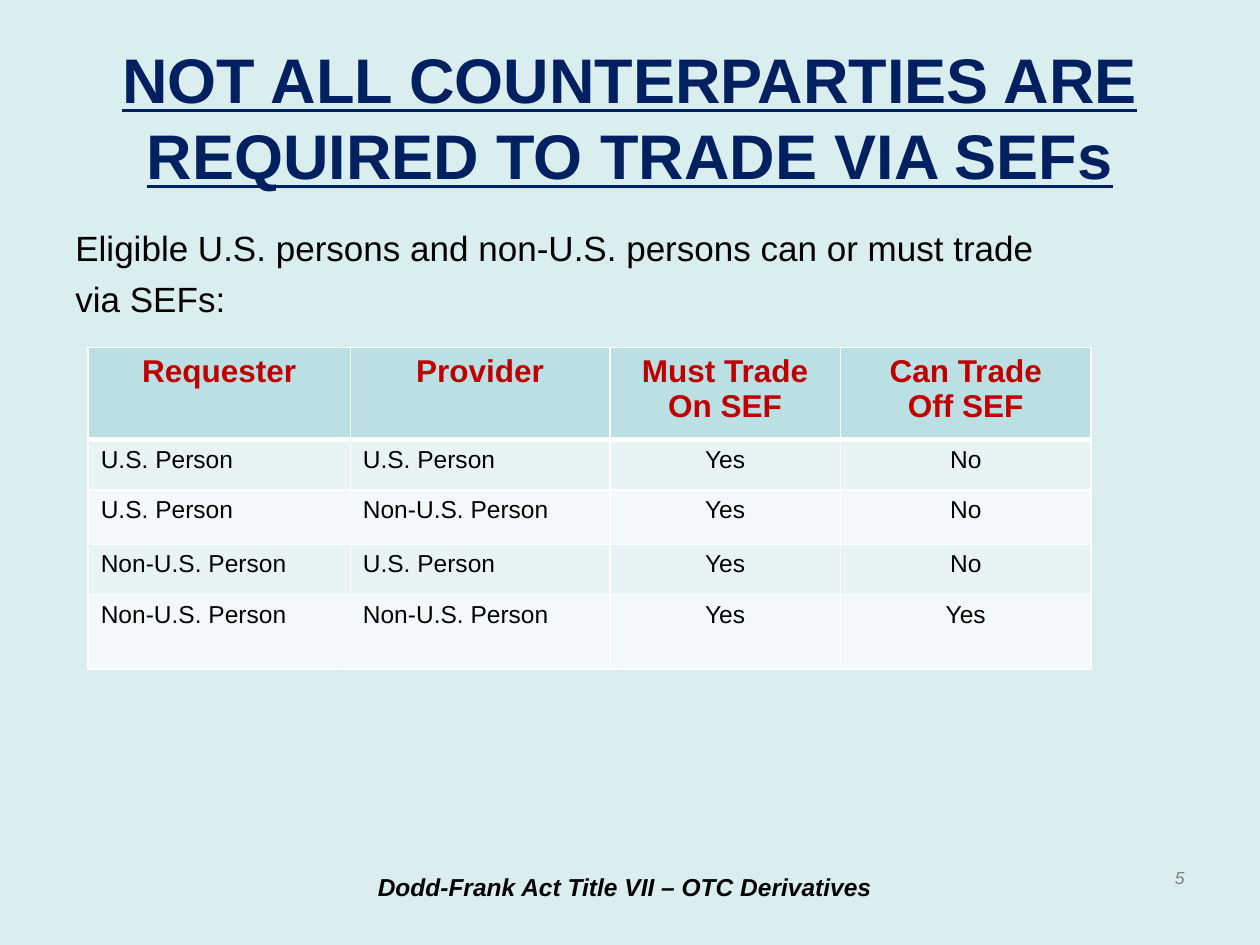
from lxml import etree
from pptx import Presentation
from pptx import util as u
from pptx.dml.color import RGBColor
from pptx.enum import text
from pptx.oxml.ns import qn

LEFT, CENTER, RIGHT = text.PP_ALIGN.LEFT, text.PP_ALIGN.CENTER, text.PP_ALIGN.RIGHT
COLUMNS, ROWS = 100, 75


def rgb(value):
    """Turn a hex string into a colour."""
    return RGBColor.from_string(value)


class Deck:
    """Holds the style and the current slide, placing elements on a grid."""

    font = "Arial"
    black, navy, red, grey = "000000", "002060", "C00000", "808080"
    background, header, bands, rule = "DAEDEF", "BBE0E3", ("E7F3F4", "F3F9FA"), "FFFFFF"

    def __init__(self):
        """Start a deck with one blank slide."""
        self.prs = Presentation()
        self.prs.slide_width, self.prs.slide_height = u.Inches(10), u.Inches(7.5)
        self.slide = self.prs.slides.add_slide(self.prs.slide_layouts[6])
        fill = self.slide.background.fill
        fill.solid()
        fill.fore_color.rgb = rgb(self.background)

    def x(self, columns):
        """Give the length of a number of grid columns."""
        return round(self.prs.slide_width * columns / COLUMNS)

    def y(self, rows):
        """Give the length of a number of grid rows."""
        return round(self.prs.slide_height * rows / ROWS)

    def paragraphs(self, frame, lines, size, color, align=LEFT, before=0,
                   bold=False, italic=False, underline=False):
        """Fill a text frame with one paragraph per line."""
        for i, line in enumerate(lines):
            para = frame.add_paragraph() if i else frame.paragraphs[0]
            para.alignment = align
            if i and before:
                para.space_before = u.Pt(before)
            run = para.add_run()
            run.text = line
            font = run.font
            font.name, font.size, font.color.rgb = self.font, u.Pt(size), rgb(color)
            font.bold, font.italic, font.underline = bold, italic, underline

    def text(self, at, lines, size, color, anchor=text.MSO_ANCHOR.TOP, **style):
        """Add a wrapped text box."""
        left, top, width, height = at
        box = self.slide.shapes.add_textbox(self.x(left), self.y(top), self.x(width), self.y(height))
        frame = box.text_frame
        frame.word_wrap, frame.vertical_anchor = True, anchor
        self.paragraphs(frame, lines, size, color, **style)

    def borders(self, cell, bottom):
        """Rule the four sides of a cell."""
        props = cell._tc.get_or_add_tcPr()
        for side, points in (("L", 1), ("R", 1), ("T", 1), ("B", bottom)):
            line = etree.SubElement(props, qn(f"a:ln{side}"), w=str(u.Pt(points)))
            solid = etree.SubElement(line, qn("a:solidFill"))
            etree.SubElement(solid, qn("a:srgbClr"), val=self.rule)

    def table(self, left, top, widths, heights, rows):
        """Add a banded table whose first row is the header."""
        grid = self.slide.shapes.add_table(
            len(rows), len(widths), self.x(left), self.y(top),
            self.x(sum(widths)), self.y(sum(heights))).table
        for column, width in zip(grid.columns, widths):
            column.width = self.x(width)
        for r, (height, values) in enumerate(zip(heights, rows)):
            grid.rows[r].height = self.y(height)
            for c, value in enumerate(values):
                cell = grid.cell(r, c)
                self.borders(cell, 1 if r else 3)
                cell.fill.solid()
                cell.fill.fore_color.rgb = rgb(self.bands[(r - 1) % 2] if r else self.header)
                self.paragraphs(cell.text_frame, value.split("\n"), 14 if r else 18,
                                self.black if r else self.red,
                                align=LEFT if r and c < 2 else CENTER, bold=r == 0)


def main():
    """Build the slide."""
    deck = Deck()
    deck.text((5, 17.5, 90, 49.5),
              ["Eligible U.S. persons and non-U.S. persons can or must trade", "via SEFs:"],
              20, deck.black, before=5)
    deck.text((23.6, 68.7, 52, 4.4), ["Dodd-Frank Act Title VII – OTC Derivatives"],
              14, deck.black, align=CENTER, bold=True, italic=True)
    deck.text((71.7, 68.3, 23.3, 5.2), ["5"], 10, deck.grey, align=RIGHT, italic=True)
    deck.text((5, 3, 90, 12.5), ["NOT ALL COUNTERPARTIES ARE REQUIRED TO TRADE VIA SEFs"],
              36, deck.navy, anchor=text.MSO_ANCHOR.MIDDLE, align=CENTER,
              bold=True, underline=True)
    domestic, foreign = "U.S. Person", "Non-U.S. Person"
    deck.table(7, 27.6, (20.8, 20.6, 18.3, 19.9), (7.3, 4, 4.3, 4, 5.9), [
        ("Requester", "Provider", "Must Trade\nOn SEF", "Can Trade\nOff SEF"),
        (domestic, domestic, "Yes", "No"),
        (domestic, foreign, "Yes", "No"),
        (foreign, domestic, "Yes", "No"),
        (foreign, foreign, "Yes", "Yes"),
    ])
    deck.prs.save("out.pptx")


if __name__ == "__main__":
    main()
